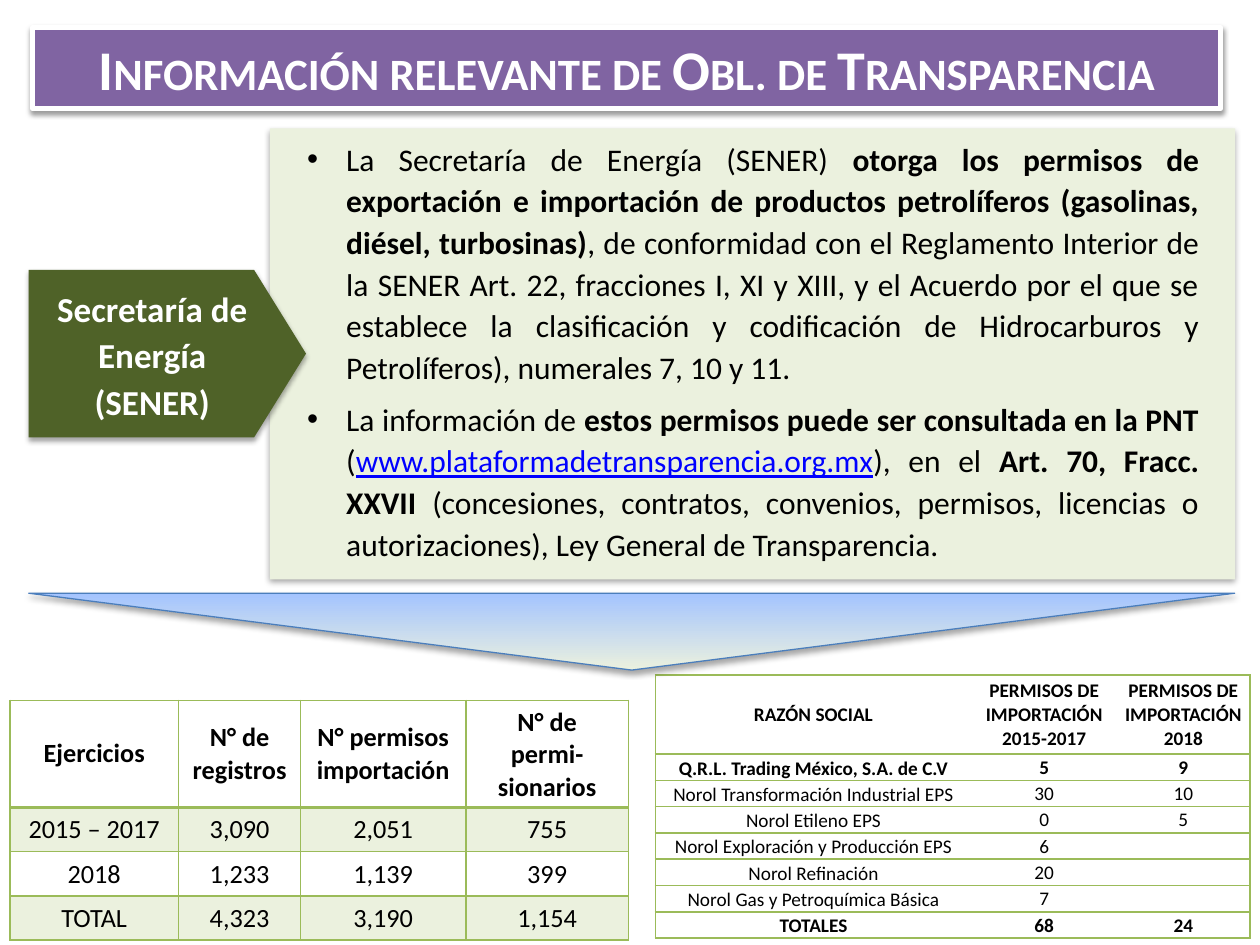
from dataclasses import dataclass
from lxml import etree
from pptx import Presentation
from pptx import util as u
from pptx.dml.color import RGBColor
from pptx.enum import shapes, text
from pptx.oxml import ns


@dataclass(frozen=True)
class Theme:
    font: str = "Calibri"
    purple: str = "8064A2"
    dark_green: str = "4F6228"
    pale_green: str = "EBF1DE"
    grid: str = "9BBB59"
    sky: str = "A4C4FF"
    outline: str = "4B7EBC"
    link: str = "0000FF"
    white: str = "FFFFFF"
    black: str = "000000"
    title: int = 32
    label: int = 20
    body: int = 18
    years: float = 15
    companies: float = 11


T = Theme()
NO_GRID = "{2D5ABB26-0587-4C30-8999-92F81FD0307C}"
PLAIN, BOLD, LINK = "plain", "bold", "link"

POINTS = [
    [("La Secretaría de Energía (SENER) ", PLAIN),
     ("otorga los permisos de exportación e importación de productos petrolíferos "
      "(gasolinas, diésel, turbosinas)", BOLD),
     (", de conformidad con el Reglamento Interior de la SENER Art. 22, fracciones I, XI y XIII, "
      "y el Acuerdo por el que se establece la clasificación y codificación de Hidrocarburos y "
      "Petrolíferos), numerales 7, 10 y 11.", PLAIN)],
    [("La información de ", PLAIN),
     ("estos permisos puede ser consultada en la PNT ", BOLD),
     ("(", PLAIN),
     ("www.plataformadetransparencia.org.mx", LINK),
     ("), en el ", PLAIN),
     ("Art. 70, Fracc. XXVII", BOLD),
     (" (concesiones, contratos, convenios, permisos, licencias o autorizaciones), "
      "Ley General de Transparencia.", PLAIN)],
]
YEARS = [
    ["Ejercicios", "N° de registros", "N° permisos importación", "N° de permi-sionarios"],
    ["2015 – 2017", "3,090", "2,051", "755"],
    ["2018", "1,233", "1,139", "399"],
    ["TOTAL", "4,323", "3,190", "1,154"],
]
COMPANIES = [
    ["RAZÓN SOCIAL", "PERMISOS DE IMPORTACIÓN 2015-2017", "PERMISOS DE IMPORTACIÓN 2018"],
    ["Q.R.L. Trading México, S.A. de C.V", "5", "9"],
    ["Norol Transformación Industrial EPS", "30", "10"],
    ["Norol Etileno EPS", "0", "5"],
    ["Norol Exploración y Producción EPS", "6", ""],
    ["Norol Refinación", "20", ""],
    ["Norol Gas y Petroquímica Básica", "7", ""],
    ["TOTALES", "68", "24"],
]


def rgb(color):
    return RGBColor.from_string(color)


def cm_box(*lengths):
    return [u.Cm(length) for length in lengths]


def style(r, size, color=T.black, bold=False):
    r.font.name, r.font.size, r.font.bold = T.font, u.Pt(size), bold
    r.font.color.rgb = rgb(color)


def drop_shadow(sp, alpha=35, dist=1.8):
    sp.shadow.inherit = False
    effects = sp._element.spPr.find(ns.qn("a:effectLst"))
    shadow = etree.SubElement(effects, ns.qn("a:outerShdw"), blurRad=str(u.Pt(3.1)),
                              dist=str(u.Pt(dist)), dir="5400000", rotWithShape="0")
    color = etree.SubElement(shadow, ns.qn("a:srgbClr"), val=T.black)
    etree.SubElement(color, ns.qn("a:alpha"), val=str(alpha * 1000))


def add_block(s, kind, box, fill):
    sp = s.shapes.add_shape(kind, *cm_box(*box))
    sp.fill.solid()
    sp.fill.fore_color.rgb = rgb(fill)
    sp.line.fill.background()
    drop_shadow(sp)
    return sp


def add_text(s, box):
    tf = s.shapes.add_textbox(*cm_box(*box)).text_frame
    tf.word_wrap = True
    return tf


def title_bar(s, box):
    sp = s.shapes.title
    sp.left, sp.top, sp.width, sp.height = cm_box(*box)
    sp.fill.solid()
    sp.fill.fore_color.rgb = rgb(T.purple)
    sp.line.color.rgb = rgb(T.white)
    sp.line.width = u.Pt(3)
    drop_shadow(sp, 38, 1.6)
    tf = sp.text_frame
    tf.text = "Información relevante de Obl. de Transparencia"
    tf.auto_size = text.MSO_AUTO_SIZE.NONE
    tf.vertical_anchor = text.MSO_ANCHOR.MIDDLE
    p = tf.paragraphs[0]
    p.alignment = text.PP_ALIGN.CENTER
    style(p.runs[0], T.title, T.white, True)
    p.runs[0].font._element.set("cap", "small")


def legal_panel(s, box):
    x, y, w, h = box
    add_block(s, shapes.MSO_SHAPE.RECTANGLE, box, T.pale_green)
    tf = add_text(s, (x + 0.5, y + 0.03, w - 0.97, h))
    for i, point in enumerate(POINTS):
        p = tf.add_paragraph() if i else tf.paragraphs[0]
        pPr = p._p.get_or_add_pPr()
        pPr.set("marL", str(u.Cm(0.79)))
        pPr.set("indent", str(-u.Cm(0.79)))
        etree.SubElement(pPr, ns.qn("a:buFont"), typeface="Arial")
        etree.SubElement(pPr, ns.qn("a:buChar"), char="•")
        p.alignment = text.PP_ALIGN.JUSTIFY
        p.line_spacing, p.space_after = 1.1, u.Pt(6)
        for words, look in point:
            r = p.add_run()
            r.text = words
            style(r, T.body, T.link if look == LINK else T.black, look == BOLD)
            if look == LINK:
                r.font.underline = True


def agency_tag(s, box):
    x, y, w, h = box
    tag = add_block(s, shapes.MSO_SHAPE.PENTAGON, box, T.dark_green)
    tag.adjustments[0] = 0.31
    tf = add_text(s, (x, y + 0.15, w - 0.61, h - 0.36))
    tf.text = "Secretaría de Energía (SENER)"
    p = tf.paragraphs[0]
    p.alignment, p.line_spacing = text.PP_ALIGN.CENTER, 1.1
    style(p.runs[0], T.label, T.white, True)


def down_pointer(s, box):
    sp = add_block(s, shapes.MSO_SHAPE.ISOSCELES_TRIANGLE, box, T.pale_green)
    sp._element.spPr.xfrm.set("flipV", "1")
    sp.fill.gradient()
    sp.fill.gradient_angle = 270
    for stop, color in zip(sp.fill.gradient_stops, (T.pale_green, T.sky)):
        stop.color.rgb = rgb(color)
    sp._element.spPr.find(ns.qn("a:gradFill")).set("rotWithShape", "0")
    sp.line.color.rgb = rgb(T.outline)
    sp.line.width = u.Pt(0.75)


def set_borders(cell, widths):
    tcPr = cell._tc.get_or_add_tcPr()
    for i, (side, width) in enumerate(widths.items()):
        line = etree.Element(ns.qn(f"a:ln{side}"), w=str(u.Pt(width)))
        fill = etree.SubElement(line, ns.qn("a:solidFill"))
        etree.SubElement(fill, ns.qn("a:srgbClr"), val=T.grid)
        tcPr.insert(i, line)


def add_grid(s, origin, cols, rows, data, size, bold_rows):
    frame = s.shapes.add_table(len(rows), len(cols), *cm_box(*origin, sum(cols), sum(rows)))
    table = frame.table
    table._tbl.tblPr.find(ns.qn("a:tableStyleId")).text = NO_GRID
    for column, width in zip(table.columns, cols):
        column.width = u.Cm(width)
    for i, (row, height) in enumerate(zip(table.rows, rows)):
        row.height = u.Cm(height)
        for cell, words in zip(row.cells, data[i]):
            cell.text = words
            p = cell.text_frame.paragraphs[0]
            p.alignment = text.PP_ALIGN.CENTER
            for r in p.runs:
                style(r, size, bold=i in bold_rows)
            if not words:
                p._p.get_or_add_endParaRPr().set("sz", str(size * 100))
    return table


def years_table(s, origin):
    table = add_grid(s, origin, [3.4, 2.46, 3.33, 3.28], [2.16] + [0.89] * 3, YEARS, T.years, {0})
    for i, row in enumerate(table.rows):
        for cell in row.cells:
            if i % 2:
                cell.fill.solid()
                cell.fill.fore_color.rgb = rgb(T.pale_green)
            if i == 0:
                cell.vertical_anchor = text.MSO_ANCHOR.MIDDLE
            set_borders(cell, {"L": 1, "R": 1, "T": 2 if i == 1 else 1, "B": 2 if i == 0 else 1})


def companies_table(s, origin):
    table = add_grid(s, origin, [6.38, 2.92, 2.69], [1.59] + [0.53] * 7, COMPANIES,
                     T.companies, {0, 1, 7})
    for i, row in enumerate(table.rows):
        for j, cell in enumerate(row.cells):
            cell.margin_left = cell.margin_right = cell.margin_top = u.Cm(0.02)
            cell.margin_bottom = 0
            bottom = i and j == 0
            cell.vertical_anchor = text.MSO_ANCHOR.BOTTOM if bottom else text.MSO_ANCHOR.MIDDLE
            cell.fill.solid()
            cell.fill.fore_color.rgb = rgb(T.white)
            outer = {0: {"L": 1}, 2: {"R": 1}}.get(j, {})
            set_borders(cell, {**outer, "T": 1, "B": 1})


def main():
    prs = Presentation()
    prs.slide_width, prs.slide_height = u.Cm(25.4), u.Cm(19.05)
    s = prs.slides.add_slide(prs.slide_layouts[5])
    title_bar(s, (0.66, 0.56, 23.95, 1.63))
    legal_panel(s, (5.44, 2.59, 19.46, 9.09))
    agency_tag(s, (0.58, 5.44, 5.59, 3.38))
    years_table(s, (0.2, 14.12))
    companies_table(s, (13.21, 13.61))
    down_pointer(s, (0.58, 11.96, 24.31, 1.55))
    prs.save("out.pptx")


if __name__ == "__main__":
    main()
